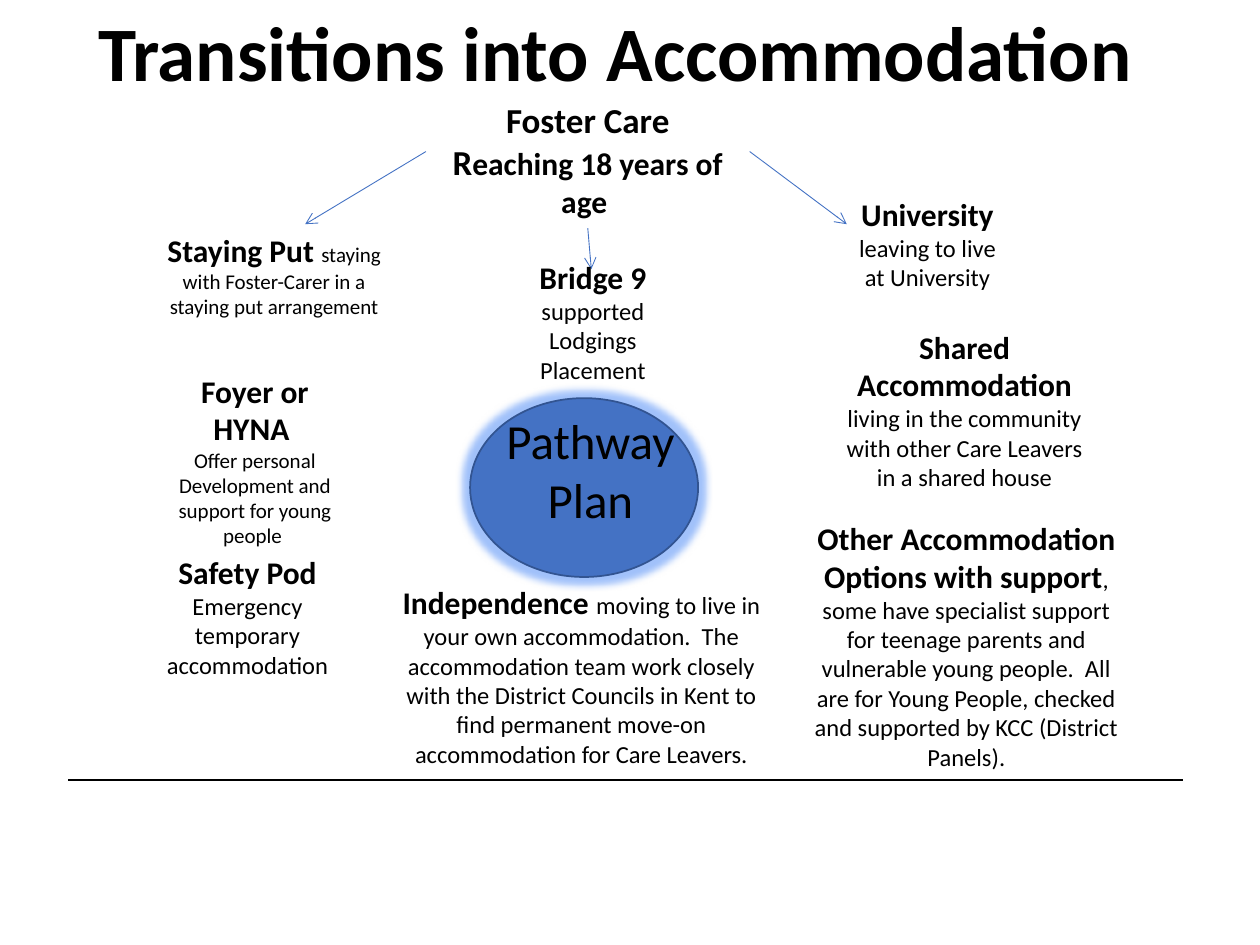
from dataclasses import dataclass
from lxml.etree import SubElement
from pptx import Presentation
from pptx.dml.color import RGBColor as RGB
from pptx.enum.shapes import MSO_CONNECTOR as Link, MSO_SHAPE as Shape
from pptx.enum.text import MSO_ANCHOR as Anchor, MSO_AUTO_SIZE as Fit, PP_ALIGN as Align
from pptx.oxml.ns import qn
from pptx.util import Pt


@dataclass(frozen=True)
class Theme:
    font: str = "Calibri"
    ink: str = "000000"
    blue: str = "4472C4"
    edge: str = "325491"
    title: int = 44
    plan: int = 28
    start: int = 20
    head: int = 18
    body: int = 14
    small: int = 12


THEME = Theme()


def write(para, text, size=THEME.body, bold=False, color=THEME.ink):
    """Add text to a paragraph; each newline becomes a line break."""
    for i, part in enumerate(text.split("\n")):
        if i:
            para.add_line_break()
        if part:
            run = para.add_run()
            run.text = part
            font = run.font
            font.name, font.size, font.bold = THEME.font, Pt(size), bold
            font.color.rgb = RGB.from_string(color)


def add_box(slide, box, fit=Fit.SHAPE_TO_FIT_TEXT):
    """Add a wrapping text box and return its frame, centred."""
    frame = slide.shapes.add_textbox(*map(Pt, box)).text_frame
    frame.word_wrap = True
    frame.auto_size = fit
    frame.paragraphs[0].alignment = Align.CENTER
    return frame


def add_line(slide, start, end, color, width, arrow=False):
    line = slide.shapes.add_connector(Link.STRAIGHT, *map(Pt, (*start, *end)))
    line.line.color.rgb = RGB.from_string(color)
    line.line.width = Pt(width)
    if arrow:
        SubElement(line.line._get_or_add_ln(), qn("a:tailEnd"), type="arrow")
    SubElement(line._element.spPr, qn("a:effectLst"))


def add_title(slide, box):
    frame = add_box(slide, box, Fit.NONE)
    frame.vertical_anchor = Anchor.BOTTOM
    para = frame.paragraphs[0]
    para.line_spacing = 0.9
    write(para, "Transitions into Accommodation", size=THEME.title, bold=True)


def add_start(slide, box):
    """Place the starting point and the three arrows that leave it."""
    x, y, w, h = box
    frame = add_box(slide, box)
    write(frame.paragraphs[0], "Foster Care", size=THEME.start, bold=True)
    para = frame.add_paragraph()
    para.alignment = Align.CENTER
    write(para, "R", size=THEME.start, bold=True)
    write(para, "eaching 18 years of age ", size=THEME.head, bold=True)
    side, low = y + 34, y + 75.5
    for start, end in (
        ((x, side), (x - 69, low)),
        ((x + w, side), (x + w + 55.5, low)),
        ((x + w / 2, y + h), (x + w / 2 + 2, y + h + 23.5)),
    ):
        add_line(slide, start, end, THEME.blue, 0.5, arrow=True)


def add_group(slide, box, items):
    """Place options, each given as (dx, dy, w, h), head, text, text size."""
    x, y = box
    for (dx, dy, w, h), head, text, size in items:
        para = add_box(slide, (x + dx, y + dy, w, h)).paragraphs[0]
        write(para, head, size=THEME.head, bold=True)
        write(para, text, size=size)


def add_plan(slide, box):
    x, y, w, h = box
    oval = slide.shapes.add_shape(Shape.OVAL, *map(Pt, box))
    oval.shadow.inherit = False
    oval.fill.solid()
    oval.fill.fore_color.rgb = RGB.from_string(THEME.blue)
    oval.line.color.rgb = RGB.from_string(THEME.edge)
    oval.line.width = Pt(1)
    effects = oval._element.spPr.find(qn("a:effectLst"))
    glow = SubElement(effects, qn("a:glow"), rad=str(Pt(8)))
    tint = SubElement(glow, qn("a:srgbClr"), val=THEME.blue)
    SubElement(tint, qn("a:satMod"), val="175000")
    SubElement(tint, qn("a:alpha"), val="40000")
    frame = add_box(slide, (x + 3.6, y + 3.6, w, 75))
    write(frame.paragraphs[0], "Pathway Plan", size=THEME.plan)


LEFT = (
    ((0, 0, 145, 58), "Staying Put ",
     "staying with Foster-Carer in a staying put arrangement", THEME.small),
    ((0, 80.6, 123, 108.7), "Foyer or HYNA \n",
     "Offer personal Development and support for young people ", THEME.small),
    ((0, 184.3, 114.5, 80), "Safety Pod ",
     "Emergency temporary accommodation", THEME.body),
)
MIDDLE = (
    ((59.8, 0, 118.8, 80), "Bridge 9 ", "supported Lodgings Placement", THEME.body),
    ((0, 185.8, 225.4, 113.8), "Independence ",
     "moving to live in your own accommodation.  The accommodation team work "
     "closely with the District Councils in Kent to find permanent move-on "
     "accommodation for Care Leavers.", THEME.body),
)
RIGHT = (
    ((20.2, 0, 106.6, 63.4), "University ", "leaving to live at University", THEME.body),
    ((18, 75.6, 153.4, 101.5), "Shared Accommodation ",
     "living in the community with other Care Leavers in a shared house", THEME.body),
    ((0, 185, 191.5, 152.6), "Other Accommodation Options with support",
     ", some have specialist support for teenage parents and vulnerable young "
     "people.  All are for Young People, checked and supported by KCC "
     "(District Panels).", THEME.body),
)


def main():
    deck = Presentation()
    deck.slide_width, deck.slide_height = Pt(720), Pt(540)
    slide = deck.slides.add_slide(deck.slide_layouts[6])
    add_line(slide, (39, 445.7), (676, 445.7), THEME.ink, 1)
    add_title(slide, (44, 10.8, 615.6, 49))
    add_start(slide, (243.4, 52.6, 185, 77.8))
    add_group(slide, (84.2, 128.2), LEFT)
    add_group(slide, (219.6, 144), MIDDLE)
    add_group(slide, (456.5, 108), RIGHT)
    add_plan(slide, (268.6, 227.5, 130.3, 102.2))
    deck.save("out.pptx")


if __name__ == "__main__":
    main()
